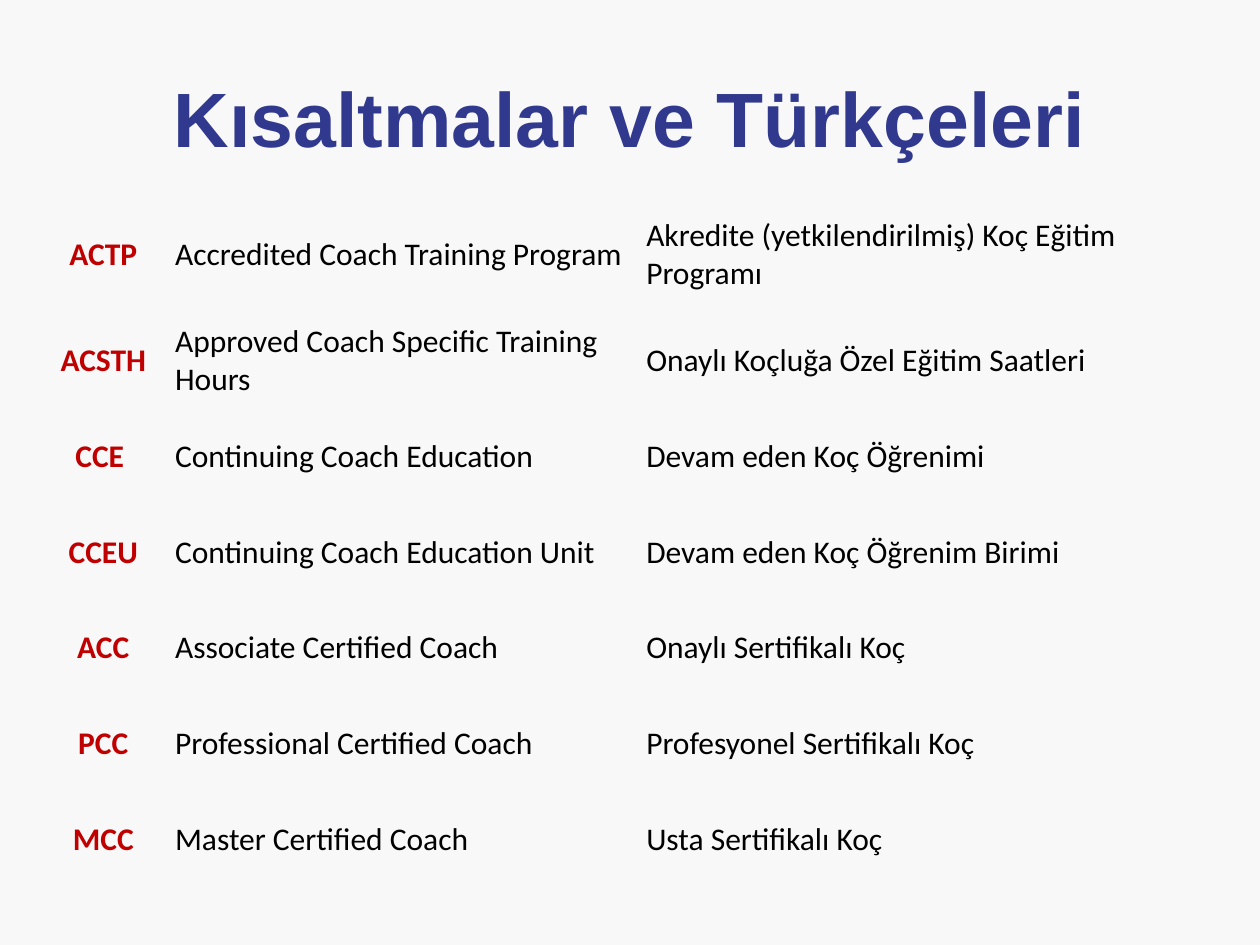
import pptx
import pptx.dml.color
import pptx.enum.text
import pptx.util
import lxml.etree
from pptx.util import Pt

RGB = pptx.dml.color.RGBColor.from_string
ALIGN = pptx.enum.text.PP_ALIGN
MIDDLE = pptx.enum.text.MSO_ANCHOR.MIDDLE
THEME = {
    "background": "F8F8F8",
    "title": ("Arial", 44, "30398D", True),
    "abbreviation": ("Calibri", 18, "C00000", True),
    "meaning": ("Calibri", 18, "000000", False),
}
ROWS = [
    ("ACTP", "Accredited Coach Training Program", "Akredite (yetkilendirilmiş) Koç Eğitim Programı"),
    ("ACSTH", "Approved Coach Specific Training Hours", "Onaylı Koçluğa Özel Eğitim Saatleri"),
    ("CCE ", "Continuing Coach Education", "Devam eden Koç Öğrenimi"),
    ("CCEU", "Continuing Coach Education Unit", "Devam eden Koç Öğrenim Birimi"),
    ("ACC", "Associate Certified Coach", "Onaylı Sertifikalı Koç"),
    ("PCC", "Professional Certified Coach", "Profesyonel Sertifikalı Koç"),
    ("MCC", "Master Certified Coach", "Usta Sertifikalı Koç"),
]
COLUMN_WIDTHS = [80.64, 269.28, 335.52]
FIRST_ROW_HEIGHT, ROW_HEIGHT = 66.96, 54.72


def write(tf, text, style, align):
    p = tf.paragraphs[0]
    p.alignment = align
    r = p.add_run()
    r.text = text
    name, size, color, bold = THEME[style]
    r.font.name = name
    r.font.size = Pt(size)
    r.font.bold = bold
    r.font.color.rgb = RGB(color)


def clear_borders(cell):
    tcPr = cell._tc.get_or_add_tcPr()
    for side in ("lnL", "lnR", "lnT", "lnB"):
        ln = lxml.etree.SubElement(tcPr, pptx.oxml.ns.qn(f"a:{side}"))
        lxml.etree.SubElement(ln, pptx.oxml.ns.qn("a:noFill"))


prs = pptx.Presentation()
prs.slide_width, prs.slide_height = Pt(720), Pt(540)
s = prs.slides.add_slide(prs.slide_layouts[5])
s.background.fill.solid()
s.background.fill.fore_color.rgb = RGB(THEME["background"])

title = s.shapes.title
title.left, title.top, title.width, title.height = Pt(36), Pt(21.6), Pt(648), Pt(90)
title.text_frame.vertical_anchor = MIDDLE
write(title.text_frame, "Kısaltmalar ve Türkçeleri", "title", ALIGN.CENTER)

table_height = FIRST_ROW_HEIGHT + ROW_HEIGHT * (len(ROWS) - 1)
table = s.shapes.add_table(
    len(ROWS), len(COLUMN_WIDTHS), Pt(18.72), Pt(111.6), Pt(sum(COLUMN_WIDTHS)), Pt(table_height)
).table
table.first_row = False
table.horz_banding = False
for column, width in zip(table.columns, COLUMN_WIDTHS):
    column.width = Pt(width)

for i, row in enumerate(ROWS):
    table.rows[i].height = Pt(ROW_HEIGHT if i else FIRST_ROW_HEIGHT)
    for j, text in enumerate(row):
        cell = table.cell(i, j)
        clear_borders(cell)
        cell.fill.background()
        cell.vertical_anchor = MIDDLE
        cell.margin_left = cell.margin_right = cell.margin_top = Pt(0.72)
        cell.margin_bottom = Pt(0)
        if j == 0:
            write(cell.text_frame, text, "abbreviation", ALIGN.CENTER)
        else:
            write(cell.text_frame, text, "meaning", ALIGN.LEFT)

prs.save("out.pptx")
